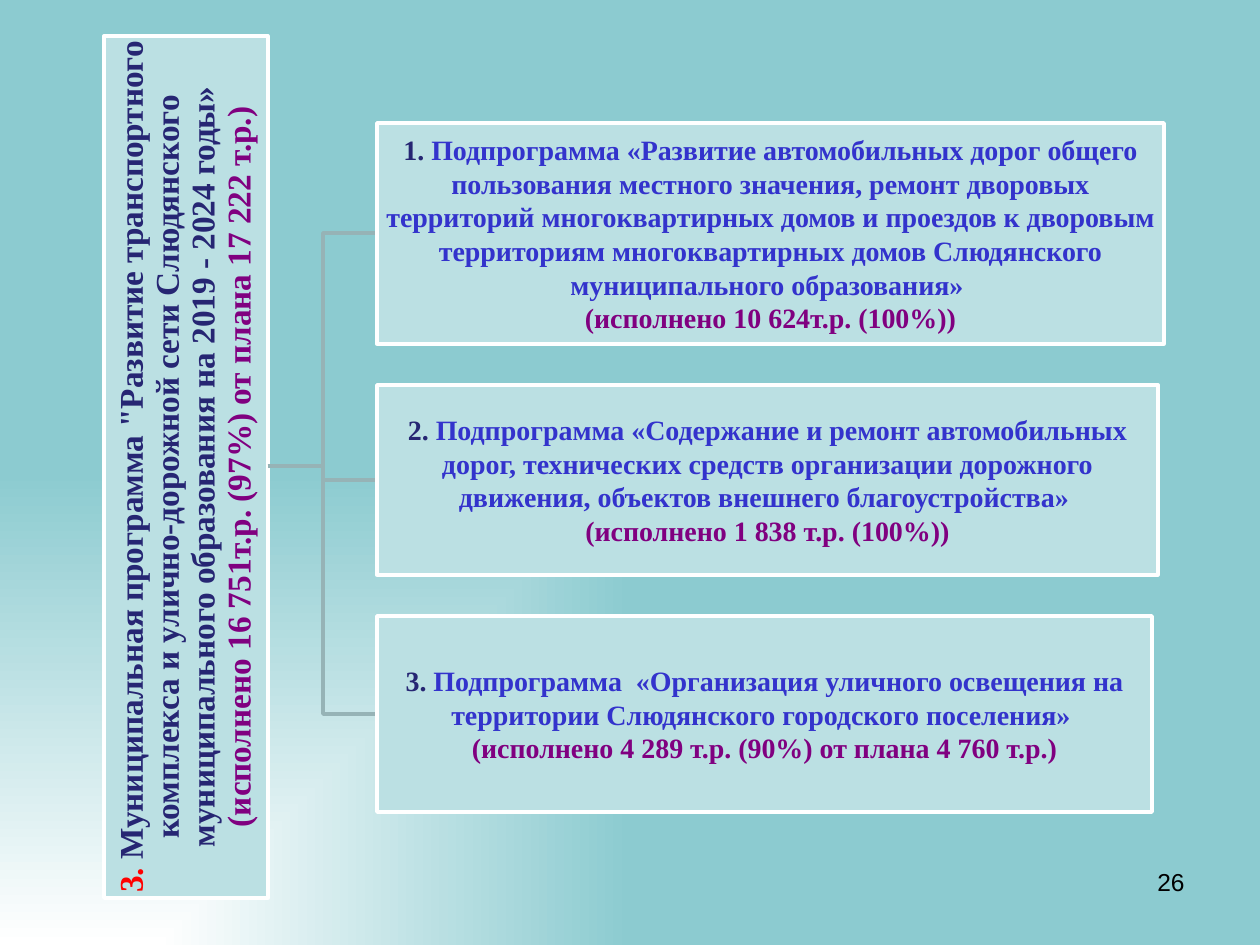
"""Build the slide on the transport programme and its three subprogrammes."""
from lxml import etree
from pptx import Presentation
from pptx.dml.color import RGBColor
from pptx.enum.text import MSO_ANCHOR, MSO_AUTO_SIZE, PP_ALIGN
from pptx.oxml.ns import qn
from pptx.util import Pt
from pptx.enum.shapes import MSO_SHAPE

PX = 914400 // 126
RECTANGLE = MSO_SHAPE.RECTANGLE
MIDDLE = MSO_ANCHOR.MIDDLE
NO_AUTOFIT = MSO_AUTO_SIZE.NONE
CENTER, RIGHT = PP_ALIGN.CENTER, PP_ALIGN.RIGHT

WHITE = RGBColor(0xFF, 0xFF, 0xFF)
BLACK = RGBColor(0x00, 0x00, 0x00)
TEAL = RGBColor(0x8C, 0xCB, 0xD0)
PALE_TEAL = RGBColor(0xBB, 0xE0, 0xE3)
GREY_TEAL = RGBColor(0x96, 0xB3, 0xB6)
RED = RGBColor(0xFF, 0x00, 0x00)
NAVY = RGBColor(0x26, 0x26, 0x73)
BLUE = RGBColor(0x33, 0x33, 0xCC)
PURPLE = RGBColor(0x80, 0x00, 0x80)

PROGRAMME = [
    ("3.", RED),
    (' Муниципальная программа "Развитие транспортного комплекса и улично-дорожной сети '
     "Слюдянского муниципального образования на 2019 - 2024 годы» ", NAVY),
    ("(исполнено 16 751т.р. (97%) от плана 17 222 т.р.)", PURPLE),
]
SUBPROGRAMMES = [
    (787, 221, "1.",
     " Подпрограмма «Развитие автомобильных дорог общего пользования местного значения, "
     "ремонт дворовых территорий многоквартирных домов и проездов к дворовым территориям "
     "многоквартирных домов Слюдянского муниципального образования» ",
     "(исполнено 10 624т.р. (100%))"),
    (781, 190, "2.",
     " Подпрограмма «Содержание и ремонт автомобильных дорог, технических средств "
     "организации дорожного движения, объектов внешнего благоустройства» ",
     "(исполнено 1 838 т.р. (100%))"),
    (775, 196, "3.",
     " Подпрограмма  «Организация уличного освещения на территории Слюдянского "
     "городского поселения» ",
     "(исполнено 4 289 т.р. (90%) от плана 4 760 т.р.)"),
]


def style_box(box):
    box.fill.solid()
    box.fill.fore_color.rgb = PALE_TEAL
    box.line.color.rgb = WHITE
    box.line.width = Pt(2)
    frame = box.text_frame
    frame.word_wrap = True
    frame.auto_size = NO_AUTOFIT
    frame.vertical_anchor = MIDDLE
    frame.margin_left = frame.margin_right = PX
    frame.margin_top = frame.margin_bottom = PX


def add_runs(paragraph, runs, size, align=CENTER, font="Times New Roman", bold=True):
    paragraph.alignment = align
    for text, color in runs:
        run = paragraph.add_run()
        run.text = text
        run.font.name = font
        run.font.size = Pt(size)
        run.font.bold = bold
        run.font.color.rgb = color


prs = Presentation()
prs.slide_width, prs.slide_height = 1260 * PX, 945 * PX
slide = prs.slides.add_slide(prs.slide_layouts[5])

backdrop = slide.background.fill
backdrop.gradient()
for stop, color, position in zip(backdrop.gradient_stops, (WHITE, TEAL), (0, 1)):
    stop.color.rgb = color
    stop.position = position
gradient = next(slide.element.iter(qn("a:gradFill")))
gradient.remove(gradient.find(qn("a:lin")))
corner_path = etree.SubElement(gradient, qn("a:path"), {"path": "rect"})
etree.SubElement(corner_path, qn("a:fillToRect"), {"t": "100000", "r": "100000"})

programme = slide.shapes.title
programme.left, programme.top = -245 * PX, 385 * PX
programme.width, programme.height = 862 * PX, 164 * PX
programme.rotation = 270
style_box(programme)
heading = programme.text_frame.paragraphs[0]
heading.line_spacing = 0.9
add_runs(heading, PROGRAMME, 19)

root_x, root_y, trunk_x, card_left, gap = 268, 466, 323, 377, 41
top = 123
for width, height, number, name, spent in SUBPROGRAMMES:
    middle = top + height // 2
    outline = slide.shapes.build_freeform(root_x, root_y, scale=PX)
    outline.add_line_segments(
        [(trunk_x, root_y), (trunk_x, middle), (card_left, middle)], close=False)
    branch = outline.convert_to_shape()
    branch.shadow.inherit = False
    branch.fill.background()
    branch.line.color.rgb = GREY_TEAL
    branch.line.width = Pt(2)

    card = slide.shapes.add_shape(
        RECTANGLE, card_left * PX, top * PX, width * PX, height * PX)
    card.shadow.inherit = False
    style_box(card)
    add_runs(card.text_frame.paragraphs[0], [(number, NAVY), (name, BLUE)], 16)
    add_runs(card.text_frame.add_paragraph(), [(spent, PURPLE)], 16)
    top += height + gap

page_number = slide.shapes.add_textbox(903 * PX, 861 * PX, 294 * PX, 66 * PX)
page_number.text_frame.word_wrap = True
add_runs(page_number.text_frame.paragraphs[0], [("26", BLACK)], 14, RIGHT, "Arial", False)

prs.save("out.pptx")
